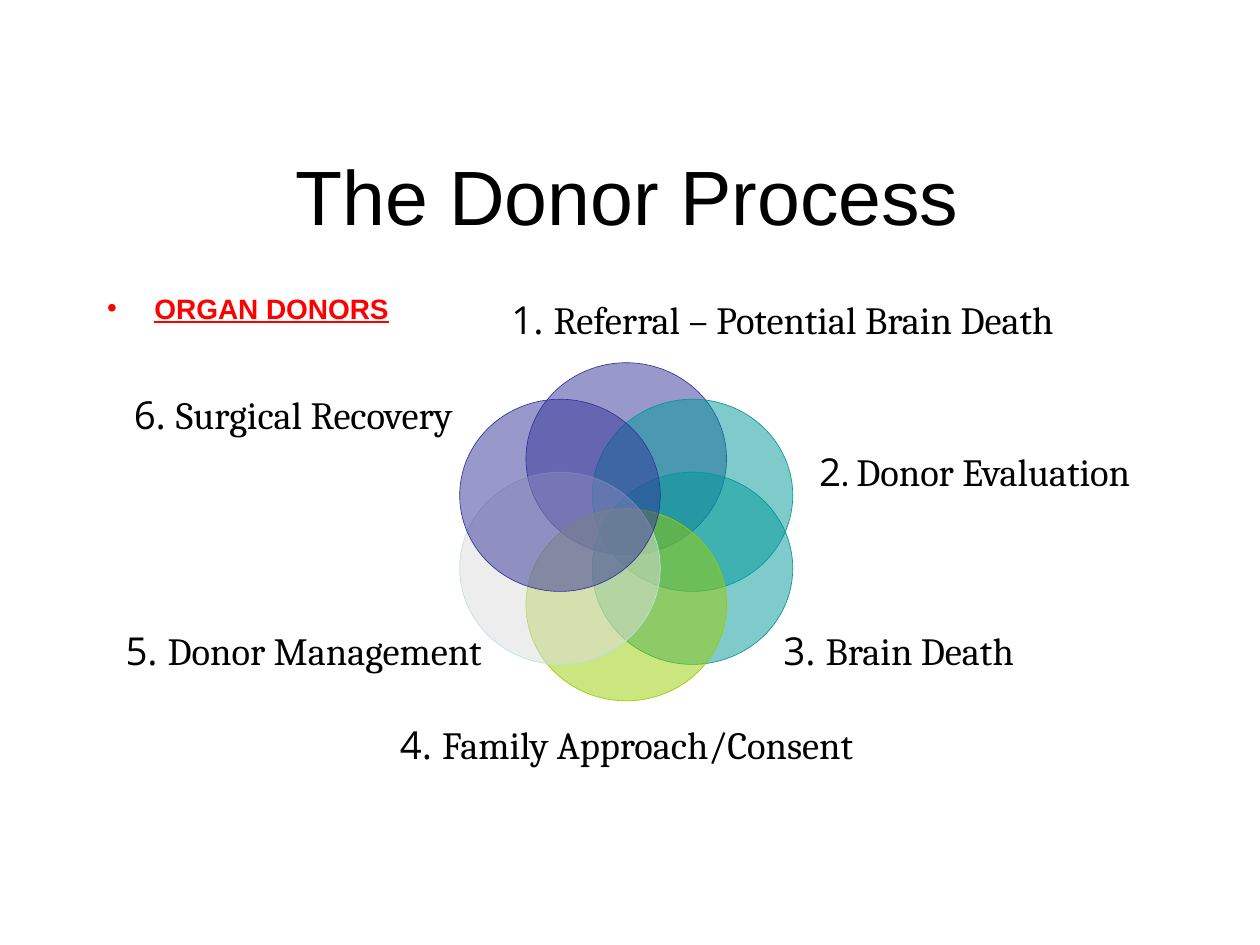
from math import cos, radians, sin

from lxml.etree import SubElement
from pptx import Presentation
from pptx.dml.color import RGBColor
from pptx.enum.shapes import MSO_SHAPE
from pptx.enum.text import MSO_ANCHOR, MSO_AUTO_SIZE, PP_ALIGN
from pptx.oxml.ns import qn
from pptx.util import Pt

BLACK = RGBColor(0x00, 0x00, 0x00)
RED = RGBColor(0xFF, 0x00, 0x00)
INDIGO = RGBColor(0x33, 0x33, 0x99)
TEAL = RGBColor(0x00, 0x99, 0x99)
LIME = RGBColor(0x99, 0xCC, 0x00)
GREY = RGBColor(0xDD, 0xDD, 0xDD)
PALE_BLUE = RGBColor(0xBB, 0xE0, 0xE3)

TITLE_FONT = {"name": "Arial", "size": Pt(44)}
HEADING_FONT = {"name": "Arial", "size": Pt(16), "bold": True, "underline": True}
NUMBER_FONT = {"name": "Open Sans", "size": Pt(22)}
LABEL_FONT = {"name": "Cambria", "size": Pt(22)}

NO_MARGINS = (0, 0, 0, 0)
BODY_MARGINS = (4.3, 4.3, 7.2, 4.3)

CIRCLE_COLORS = [
    (INDIGO, INDIGO), (TEAL, TEAL), (TEAL, TEAL),
    (LIME, LIME), (GREY, PALE_BLUE), (INDIGO, INDIGO),
]
STEP_LABELS = [
    ("1. ", "Referral – Potential Brain Death", 258, 170, 378),
    ("2", ". Donor Evaluation", 434, 256.5, 246),
    ("3. ", "Brain Death", 437, 358.8, 153),
    ("4. ", "Family Approach/Consent", 205, 412.8, 306),
    ("5. ", "Donor Management", 54, 359, 239),
    ("6. ", "Surgical Recovery", 60, 224, 215),
]


def add_span(para, text, font_values, color=BLACK):
    span = para.add_run()
    span.text = text
    for name, value in font_values.items():
        setattr(span.font, name, value)
    span.font.color.rgb = color


def format_frame(frame, margins, anchor):
    left, top, right, bottom = map(Pt, margins)
    values = {
        "margin_left": left, "margin_top": top,
        "margin_right": right, "margin_bottom": bottom,
        "word_wrap": True, "auto_size": MSO_AUTO_SIZE.NONE,
        "vertical_anchor": anchor,
    }
    for name, value in values.items():
        setattr(frame, name, value)


def add_title(page, left, top, width, height):
    title = page.shapes.title
    bounds = {"left": left, "top": top, "width": width, "height": height}
    for name, value in bounds.items():
        setattr(title, name, Pt(value))
    format_frame(title.text_frame, BODY_MARGINS, MSO_ANCHOR.MIDDLE)
    para = title.text_frame.paragraphs[0]
    para.alignment = PP_ALIGN.CENTER
    add_span(para, "The Donor Process", TITLE_FONT)


def add_heading(page, left, top, width, height):
    box = page.shapes.add_textbox(Pt(left), Pt(top), Pt(width), Pt(height))
    format_frame(box.text_frame, BODY_MARGINS, MSO_ANCHOR.TOP)
    para = box.text_frame.paragraphs[0]
    properties = para._p.get_or_add_pPr()
    properties.set("marL", str(Pt(30)))
    properties.set("indent", str(Pt(-27)))
    SubElement(properties, qn("a:buFont"), typeface="Arial")
    SubElement(properties, qn("a:buChar"), char="•")
    add_span(para, "ORGAN DONORS", HEADING_FONT, RED)


def add_circle(page, left, top, width, height, fill_color, line_color):
    circle = page.shapes.add_shape(
        MSO_SHAPE.OVAL, Pt(left), Pt(top), Pt(width), Pt(height))
    circle.shadow.inherit = False
    circle.fill.solid()
    circle.fill.fore_color.rgb = fill_color
    color_node = circle._element.spPr.find(qn("a:solidFill"))[0]
    SubElement(color_node, qn("a:alpha"), val="50000")
    circle.line.color.rgb = line_color
    circle.line.width = Pt(0.37)


def add_circle_ring(page, left, top, width, height):
    circle_width, circle_height = 114.6, 109.8
    radius_x = (width - circle_width) / (2 * sin(radians(60)))
    radius_y = (height - circle_height) / 2
    for index, colors in enumerate(CIRCLE_COLORS):
        angle = radians(360 / len(CIRCLE_COLORS) * index)
        center_x = left + width / 2 + radius_x * sin(angle)
        center_y = top + height / 2 - radius_y * cos(angle)
        add_circle(page, center_x - circle_width / 2,
                   center_y - circle_height / 2,
                   circle_width, circle_height, *colors)


def add_step_labels(page, height):
    for number, text, left, top, width in STEP_LABELS:
        box = page.shapes.add_textbox(Pt(left), Pt(top), Pt(width), Pt(height))
        format_frame(box.text_frame, NO_MARGINS, MSO_ANCHOR.MIDDLE)
        para = box.text_frame.paragraphs[0]
        para.alignment = PP_ALIGN.CENTER
        add_span(para, number, NUMBER_FONT)
        add_span(para, text, LABEL_FONT)


def main():
    deck = Presentation()
    deck.slide_width, deck.slide_height = Pt(720), Pt(540)
    page = deck.slides.add_slide(deck.slide_layouts[5])
    add_title(page, 54, 60, 612, 102)
    add_heading(page, 54, 162, 612, 378)
    add_circle_ring(page, 262.7, 207.3, 190.3, 193.2)
    add_step_labels(page, 25)
    deck.save("out.pptx")


if __name__ == "__main__":
    main()
